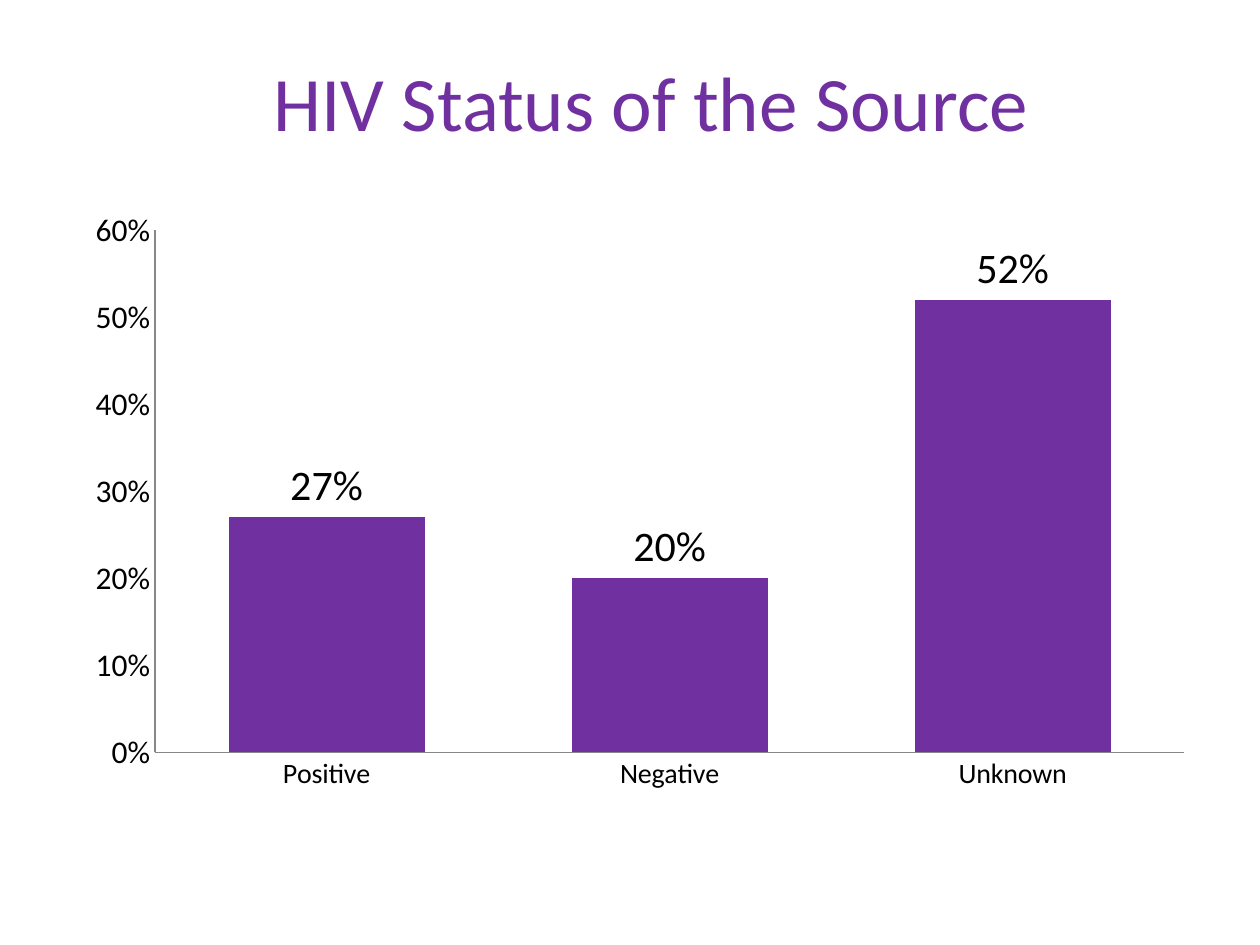
from pptx import Presentation
from pptx.chart.data import CategoryChartData
from pptx.dml.color import RGBColor
from pptx.enum.chart import XL_CHART_TYPE, XL_LABEL_POSITION, XL_TICK_MARK
from pptx.enum.text import MSO_ANCHOR, PP_ALIGN
from pptx.util import Cm, Pt

TITLE = "HIV Status of the Source"
STATUS_SHARES = {"Positive": 0.27, "Negative": 0.20, "Unknown": 0.52}
FONT = "Calibri"
COLORS = {"purple": "7030A0", "text": "000000", "axis": "878787"}
TITLE_BOX = (Cm(1.7), Cm(0.43), Cm(22.86), Cm(3.18))
CHART_BOX = (Cm(1.47), Cm(4.01), Cm(22.86), Cm(12.19))


def set_font(font, size, color):
    """Apply the slide's typeface with a size and colour."""
    font.name = FONT
    font.size = Pt(size)
    font.color.rgb = RGBColor.from_string(COLORS[color])


def add_title(page):
    """Place and format the title."""
    box = page.shapes.title
    box.left, box.top, box.width, box.height = TITLE_BOX
    box.text_frame.vertical_anchor = MSO_ANCHOR.MIDDLE
    para = box.text_frame.paragraphs[0]
    para.alignment = PP_ALIGN.CENTER
    span = para.add_run()
    span.text = TITLE
    set_font(span.font, 44, "purple")


def style_axis(axis, size):
    """Format an axis without ticks or gridlines."""
    axis.has_major_gridlines = False
    axis.major_tick_mark = axis.minor_tick_mark = XL_TICK_MARK.NONE
    axis.format.line.color.rgb = RGBColor.from_string(COLORS["axis"])
    axis.format.line.width = Pt(0.75)
    set_font(axis.tick_labels.font, size, "text")


def add_status_chart(page):
    """Add the column chart of source status."""
    data = CategoryChartData(number_format="0%")
    data.categories = list(STATUS_SHARES)
    data.add_series("Series 1", list(STATUS_SHARES.values()))
    chart = page.shapes.add_chart(XL_CHART_TYPE.COLUMN_CLUSTERED, *CHART_BOX, data).chart
    chart.has_legend = chart.has_title = False
    set_font(chart.font, 10, "text")

    style_axis(chart.category_axis, 16)
    shares = chart.value_axis
    style_axis(shares, 18)
    shares.minimum_scale, shares.maximum_scale, shares.major_unit = 0, 0.6, 0.1
    shares.tick_labels.number_format = "0%"
    shares.tick_labels.number_format_is_linked = False

    plot = chart.plots[0]
    plot.gap_width = 75
    plot.vary_by_categories = False
    series = plot.series[0]
    series.format.fill.solid()
    series.format.fill.fore_color.rgb = RGBColor.from_string(COLORS["purple"])
    labels = series.data_labels
    labels.show_value = True
    labels.position = XL_LABEL_POSITION.OUTSIDE_END
    labels.number_format = "0%"
    labels.number_format_is_linked = False
    set_font(labels.font, 24, "text")


def main():
    """Build and save the slide."""
    deck = Presentation()
    deck.slide_width, deck.slide_height = Cm(25.4), Cm(19.05)
    page = deck.slides.add_slide(deck.slide_layouts[5])
    add_title(page)
    add_status_chart(page)
    deck.save("out.pptx")


if __name__ == "__main__":
    main()
